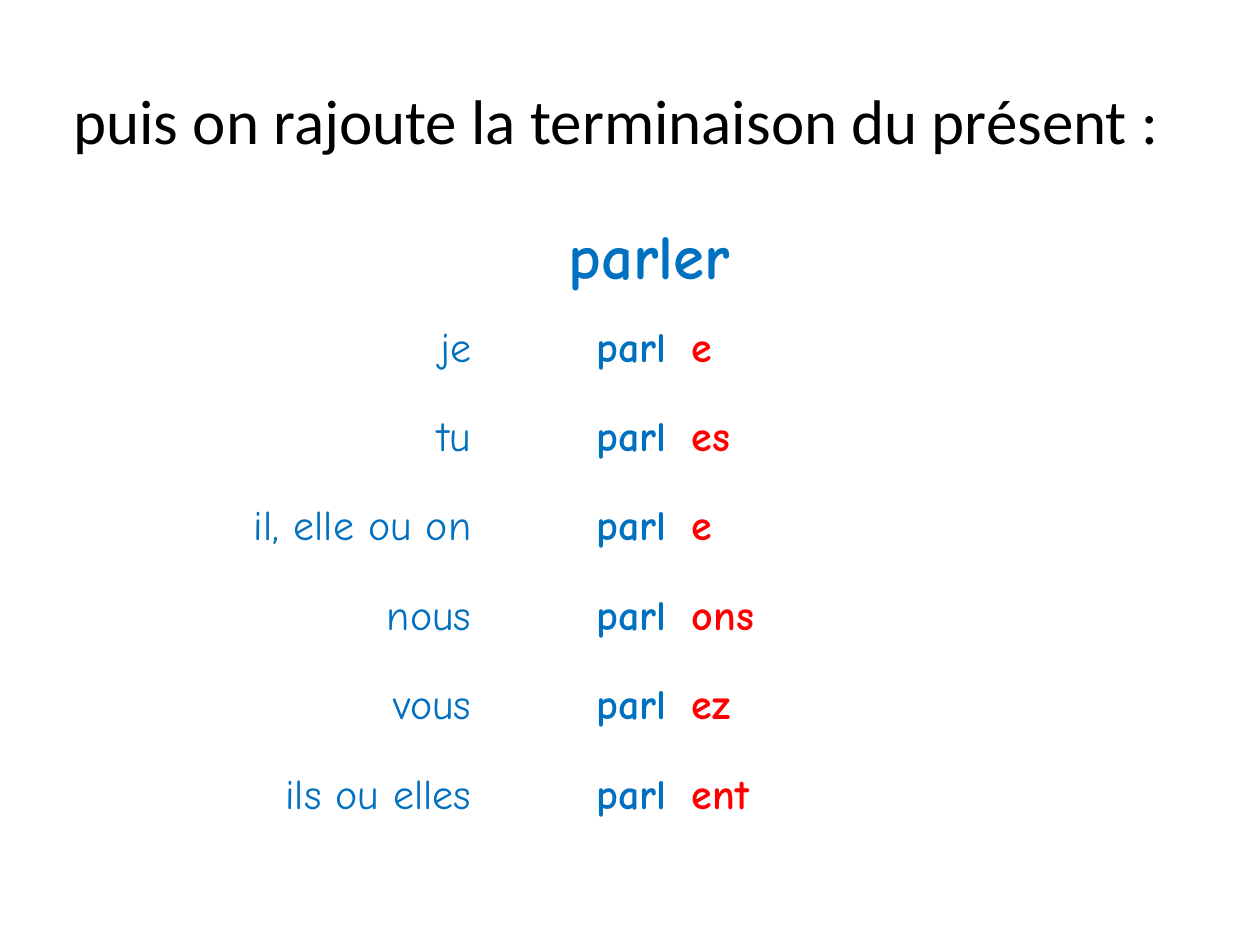
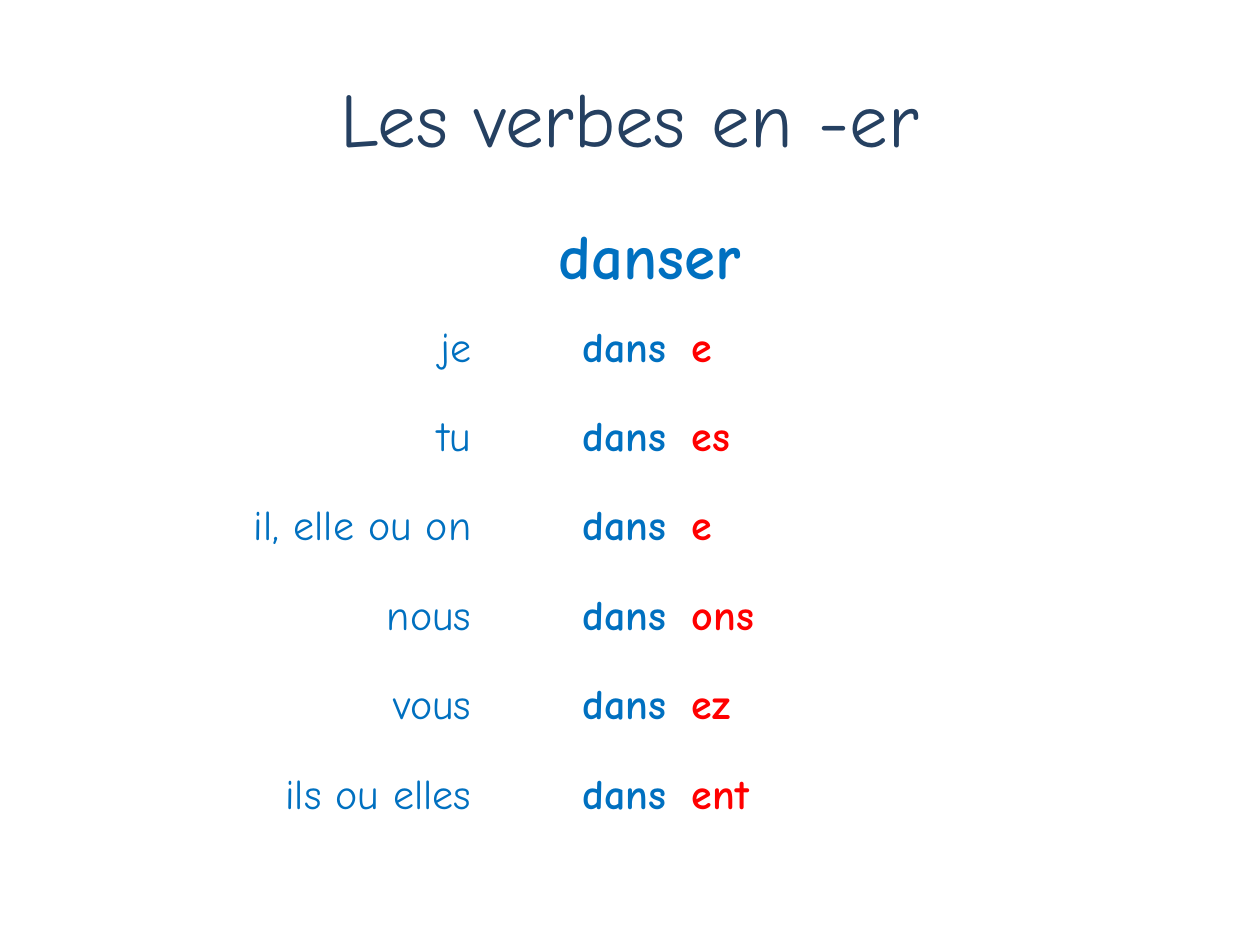
from dataclasses import dataclass

from pptx import Presentation
from pptx.dml.color import RGBColor
from pptx.enum.text import MSO_ANCHOR, PP_ALIGN
from pptx.util import Emu, Pt


@dataclass(frozen=True)
class Theme:
    blue: str = "0070C0"
    red: str = "FF0000"
    navy: str = "254061"
    black: str = "000000"
    white: str = "FFFFFF"
    plain: str = "Calibri"
    comic: str = "Comic Neue"
    large: int = 44
    head: int = 36
    body: int = 24


THEME = Theme()
SCALE = 9144
PAGE = (1000, 750)
GRID = (122, 170, 787, 497)
COLS = (262, 155, 370)
FORMS = (
    ("je", "e"),
    ("tu", "es"),
    ("il, elle ou on", "e"),
    ("nous", "ons"),
    ("vous", "ez"),
    ("ils ou elles", "ent"),
)


def px(count):
    return Emu(count * SCALE)


def write(frame, text, font, size, color, align, bold=False):
    frame.vertical_anchor = MSO_ANCHOR.MIDDLE
    line = frame.paragraphs[0]
    line.alignment = align
    run = line.add_run()
    run.text = text
    run.font.name = font
    run.font.size = Pt(size)
    run.font.bold = bold
    run.font.color.rgb = RGBColor.from_string(color)


def add_title(slide, box, text, font, size, color):
    title = slide.shapes.title
    title.left, title.top, title.width, title.height = map(px, box)
    title.text_frame.word_wrap = True
    write(title.text_frame, text, font, size, color, PP_ALIGN.CENTER)


def fill_cell(cell, text, size, color, align, bold):
    cell.vertical_anchor = MSO_ANCHOR.MIDDLE
    write(cell.text_frame, text, THEME.comic, size, color, align, bold)


def add_verb(slide, box, stem):
    count = len(FORMS) + 1
    table = slide.shapes.add_table(count, len(COLS), *map(px, box)).table
    for col, width in zip(table.columns, COLS):
        col.width = px(width)
    for row in table.rows:
        row.height = px(box[3] // count)
    for cell in table.iter_cells():
        cell.fill.solid()
        cell.fill.fore_color.rgb = RGBColor.from_string(THEME.white)

    head = table.cell(0, 0)
    head.merge(table.cell(0, len(COLS) - 1))
    fill_cell(head, stem + "er", THEME.head, THEME.blue, PP_ALIGN.CENTER, True)

    for row, (person, ending) in enumerate(FORMS, 1):
        parts = (
            (person, THEME.blue, PP_ALIGN.RIGHT, False),
            (stem, THEME.blue, PP_ALIGN.RIGHT, True),
            (ending, THEME.red, PP_ALIGN.LEFT, True),
        )
        for col, (text, color, align, bold) in enumerate(parts):
            fill_cell(table.cell(row, col), text, THEME.body, color, align, bold)


def add_slide(deck, stem, title):
    slide = deck.slides.add_slide(deck.slide_layouts.get_by_name("Title Only"))
    add_title(slide, *title)
    add_verb(slide, GRID, stem)


def main():
    deck = Presentation()
    deck.slide_width, deck.slide_height = map(px, PAGE)
    add_slide(deck, "parl", (
        (28, -11, 922, 211), "puis on rajoute la terminaison du présent :",
        THEME.plain, THEME.head, THEME.black,
    ))
    add_slide(deck, "dans", (
        (50, 30, 900, 125), "Les verbes en -er",
        THEME.comic, THEME.large, THEME.navy,
    ))
    deck.save("out.pptx")


if __name__ == "__main__":
    main()
